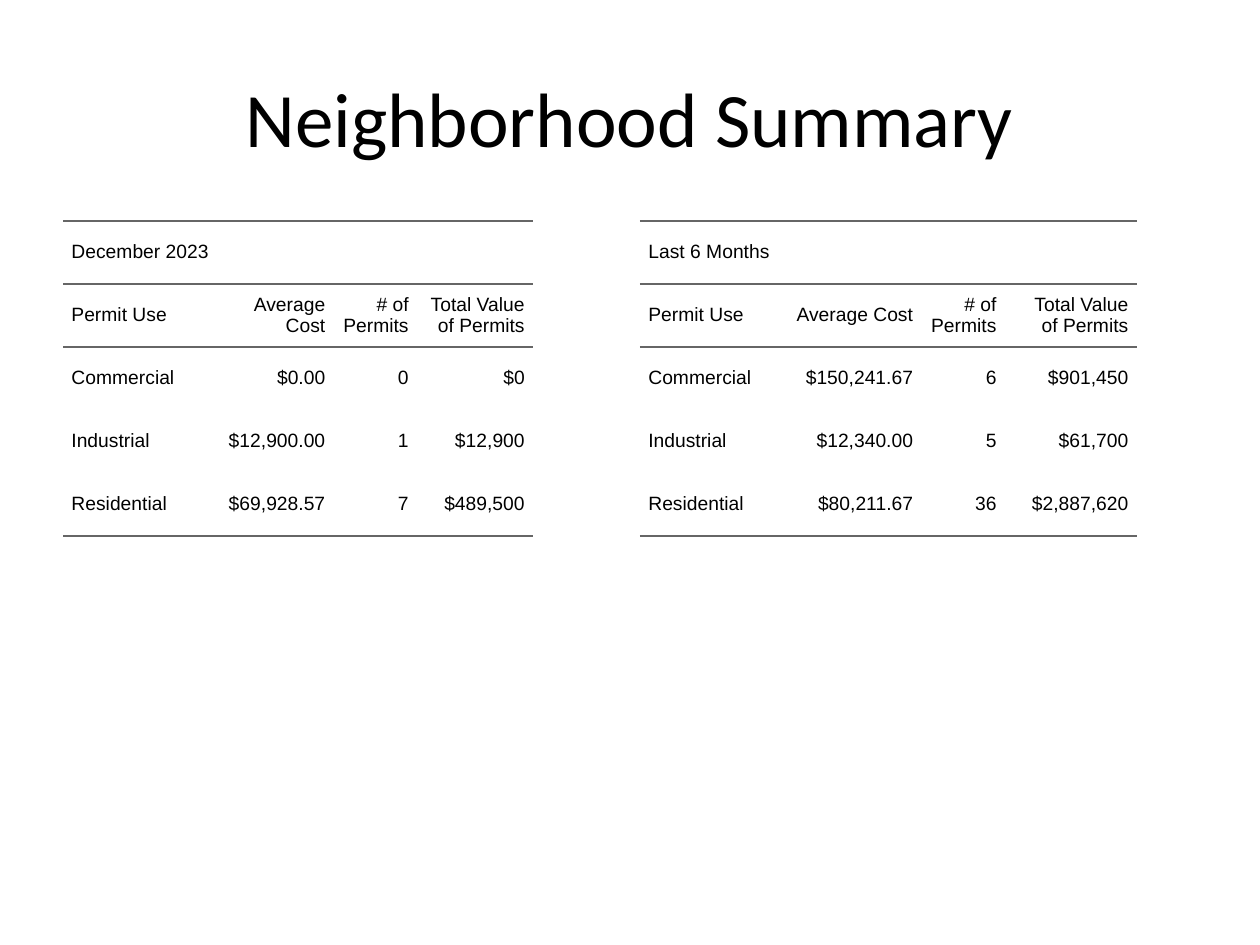
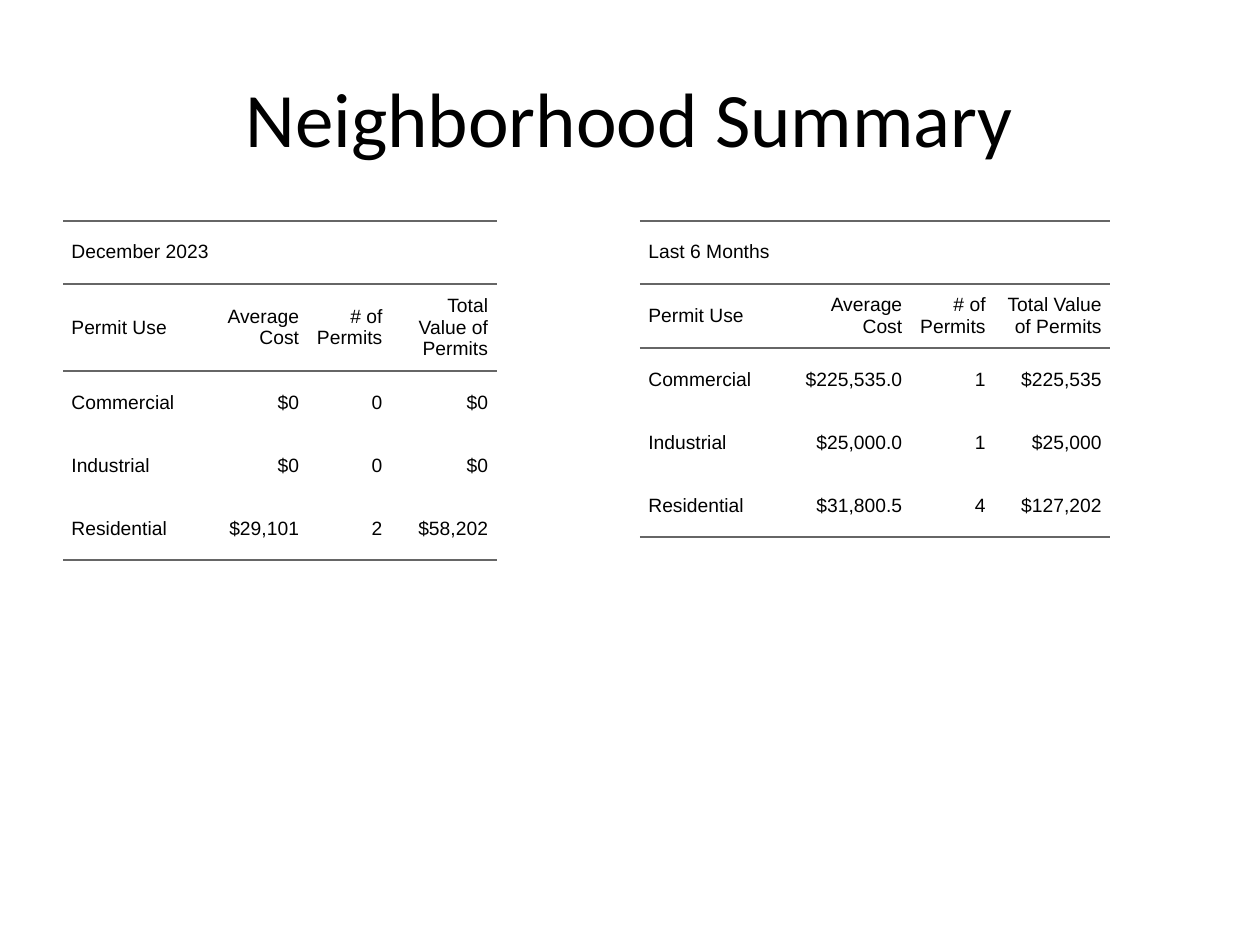
from dataclasses import dataclass

from lxml import etree
from pptx import Presentation
from pptx.dml.color import RGBColor
from pptx.enum.text import MSO_ANCHOR, PP_ALIGN
from pptx.oxml.ns import qn
from pptx.util import Cm, Pt

LEFT, CENTER, RIGHT = PP_ALIGN.LEFT, PP_ALIGN.CENTER, PP_ALIGN.RIGHT
MIDDLE = MSO_ANCHOR.MIDDLE


@dataclass(frozen=True)
class Theme:
    """Colours, fonts and sizes shared by the slides."""

    ink: str = "000000"
    rule: str = "666666"
    title_font: str = "Calibri"
    title_size: int = 44
    body_font: str = "Arial"
    body_size: int = 11
    rule_width: float = 1.5


THEME = Theme()
TITLE = "Neighborhood Summary"
HEADS = ("Permit Use", "Average Cost", "# of Permits", "Total Value of Permits")
USES = ("Commercial", "Industrial", "Residential")
MONTH, HALF = "December 2023", "Last 6 Months"
TOP, ROW = 4.45, 1.27
SPOTS = (1.27, 12.9)
PAD, SIDE = 0.18, 0.17

SLIDES = (
    (
        (MONTH, (2.8, 2.66, 1.68, 2.34),
         (("$0.00", "0", "$0"),
          ("$12,900.00", "1", "$12,900"),
          ("$69,928.57", "7", "$489,500"))),
        (HALF, (2.8, 2.88, 1.68, 2.66),
         (("$150,241.67", "6", "$901,450"),
          ("$12,340.00", "5", "$61,700"),
          ("$80,211.67", "36", "$2,887,620"))),
    ),
    (
        (MONTH, (2.8, 2.13, 1.68, 2.13),
         (("$0", "0", "$0"),
          ("$0", "0", "$0"),
          ("$29,101", "2", "$58,202"))),
        (HALF, (2.8, 2.66, 1.68, 2.34),
         (("$225,535.0", "1", "$225,535"),
          ("$25,000.0", "1", "$25,000"),
          ("$31,800.5", "4", "$127,202"))),
    ),
)


def add_text(frame, text, font, size, align):
    """Write one styled run into the first paragraph of a frame."""
    para = frame.paragraphs[0]
    para.alignment = align
    run = para.add_run()
    run.text = text
    run.font.name = font
    run.font.size = Pt(size)
    run.font.color.rgb = RGBColor.from_string(THEME.ink)


def add_title(slide, text):
    """Add the centred slide title."""
    box = slide.shapes.add_textbox(Cm(1.27), Cm(0.76), Cm(22.86), Cm(3.18))
    frame = box.text_frame
    frame.word_wrap = True
    frame.vertical_anchor = MIDDLE
    add_text(frame, text, THEME.title_font, THEME.title_size, CENTER)


def set_rules(cell, sides):
    """Rule the named sides of a cell and clear the others."""
    props = cell._tc.get_or_add_tcPr()
    for place, side in enumerate("LRTB"):
        line = etree.Element(qn(f"a:ln{side}"))
        if side in sides:
            line.set("w", str(Pt(THEME.rule_width)))
            fill = etree.SubElement(line, qn("a:solidFill"))
            etree.SubElement(fill, qn("a:srgbClr")).set("val", THEME.rule)
        else:
            etree.SubElement(line, qn("a:noFill"))
        props.insert(place, line)


def fill_cell(cell, text, align, sides):
    """Set the text, padding and rules of a table cell."""
    cell.fill.background()
    cell.margin_left = cell.margin_right = Cm(SIDE)
    cell.margin_top = cell.margin_bottom = Cm(PAD)
    cell.vertical_anchor = MIDDLE
    if text:
        add_text(cell.text_frame, text, THEME.body_font, THEME.body_size, align)
    set_rules(cell, sides)


def add_permits(slide, left, period, widths, values):
    """Add a permit table for one period."""
    rows = [(period, "", "", ""), HEADS]
    rows += [(use, *vals) for use, vals in zip(USES, values)]
    sides = ("TB", "TB", "T", "", "B")
    shape = slide.shapes.add_table(
        len(rows), len(HEADS), Cm(left), Cm(TOP), Cm(sum(widths)), Cm(ROW * len(rows)))
    table = shape.table
    table.first_row = table.horz_banding = False
    for col, width in zip(table.columns, widths):
        col.width = Cm(width)
    for r, texts in enumerate(rows):
        table.rows[r].height = Cm(ROW)
        for c, text in enumerate(texts):
            fill_cell(table.cell(r, c), text, RIGHT if c else LEFT, sides[r])
    table.cell(0, 0).merge(table.cell(0, len(HEADS) - 1))


def main():
    """Build both summary slides and save them."""
    deck = Presentation()
    deck.slide_width, deck.slide_height = Cm(25.4), Cm(19.05)
    for tables in SLIDES:
        slide = deck.slides.add_slide(deck.slide_layouts[6])
        for left, (period, widths, values) in zip(SPOTS, tables):
            add_permits(slide, left, period, widths, values)
        add_title(slide, TITLE)
    deck.save("out.pptx")


if __name__ == "__main__":
    main()
